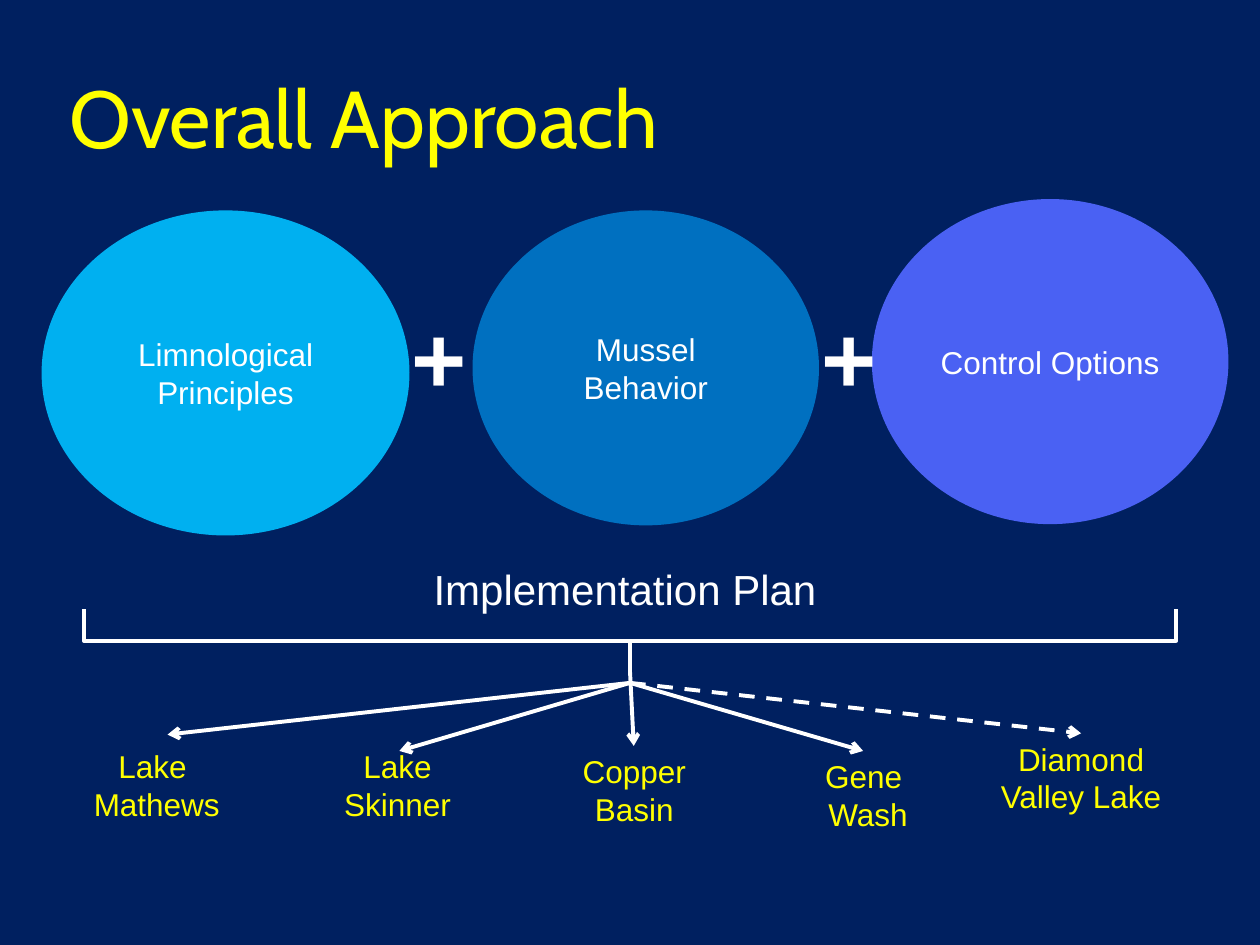
import pptx
import pptx.dml.color
import pptx.enum.dml
import pptx.enum.shapes
import pptx.enum.text
import pptx.oxml
import pptx.oxml.ns
import pptx.util
from dataclasses import dataclass

Inches = pptx.util.Inches
Pt = pptx.util.Pt
RGBColor = pptx.dml.color.RGBColor
Align = pptx.enum.text.PP_ALIGN
Anchor = pptx.enum.text.MSO_ANCHOR
Shape = pptx.enum.shapes.MSO_SHAPE

NAVY = RGBColor(0x00, 0x20, 0x60)
YELLOW = RGBColor(0xFF, 0xFF, 0x00)
WHITE = RGBColor(0xFF, 0xFF, 0xFF)
BLUE = RGBColor(0x00, 0x70, 0xC0)
VIOLET = RGBColor(0x4A, 0x61, 0xF3)
SKY = RGBColor(0x00, 0xB0, 0xF0)
STROKE = Pt(2.25)


@dataclass
class Box:
    left: float
    top: float
    width: float
    height: float

    def place(self) -> tuple:
        return tuple(Inches(n) for n in (self.left, self.top, self.width, self.height))


@dataclass
class Disc:
    text: str
    box: Box
    fill: RGBColor


@dataclass
class Lake:
    text: str
    box: Box
    start: tuple
    tip: tuple
    dashed: bool = False


def write(frame, text: str, *, size: float = 18, color: RGBColor = WHITE,
          font: str = "Arial", bold: bool = False, align=Align.CENTER,
          anchor=Anchor.TOP) -> None:
    """Fill a text frame, one paragraph for each line of text."""
    frame.word_wrap = True
    frame.auto_size = pptx.enum.text.MSO_AUTO_SIZE.NONE
    frame.vertical_anchor = anchor
    frame.text = text
    for para in frame.paragraphs:
        para.alignment = align
        para.font.size = Pt(size)
        para.font.name = font
        para.font.bold = bold
        para.font.color.rgb = color


def label(slide, box: Box, text: str, **style) -> None:
    write(slide.shapes.add_textbox(*box.place()).text_frame, text, **style)


def draw_disc(slide, disc: Disc) -> None:
    oval = slide.shapes.add_shape(Shape.OVAL, *disc.box.place())
    oval.shadow.inherit = False
    oval.fill.solid()
    oval.fill.fore_color.rgb = disc.fill
    oval.line.fill.background()
    write(oval.text_frame, disc.text, anchor=Anchor.MIDDLE)


def draw_brace(slide, box: Box) -> None:
    brace = slide.shapes.add_shape(Shape.RIGHT_BRACE, *box.place())
    brace.rotation = 90
    brace.adjustments[0] = 0
    brace.adjustments[1] = 0.5
    brace.shadow.inherit = False
    brace.fill.background()
    brace.line.color.rgb = WHITE
    brace.line.width = STROKE


def draw_arrow(slide, start: tuple, tip: tuple, dashed: bool) -> None:
    ends = [Inches(n) for n in (*start, *tip)]
    arrow = slide.shapes.add_connector(pptx.enum.shapes.MSO_CONNECTOR.STRAIGHT, *ends)
    arrow.line.color.rgb = WHITE
    arrow.line.width = STROKE
    if dashed:
        arrow.line.dash_style = pptx.enum.dml.MSO_LINE.DASH
    # Arrowhead and no shadow
    props = arrow.element.spPr
    head = pptx.oxml.parse_xml(
        f'<a:tailEnd {pptx.oxml.ns.nsdecls("a")} type="arrow"/>')
    props.find(pptx.oxml.ns.qn("a:ln")).append(head)
    props.append(pptx.oxml.parse_xml(f'<a:effectLst {pptx.oxml.ns.nsdecls("a")}/>'))


DISCS = [
    Disc("Mussel Behavior", Box(3.75, 1.67, 2.75, 2.5), BLUE),
    Disc("Control Options", Box(6.92, 1.58, 2.83, 2.58), VIOLET),
    Disc("Limnological Principles", Box(0.33, 1.67, 2.92, 2.58), SKY),
]
HUB = (5, 5.42)
LAKES = [
    Lake("Lake \nMathews", Box(0.33, 5.88, 1.83, 0.71), HUB, (1.33, 5.83)),
    Lake("Lake Skinner", Box(2.5, 5.88, 1.31, 0.71), HUB, (3.17, 5.96)),
    Lake("Copper Basin", Box(4.42, 5.92, 1.23, 0.71), (5, 5.33), (5.03, 5.92)),
    Lake("Gene\n Wash", Box(6.12, 5.96, 1.47, 0.71), HUB, (6.85, 5.96)),
    Lake("Diamond Valley Lake", Box(7.83, 5.82, 1.5, 1.31), HUB, (8.58, 5.82), True),
]


def main() -> None:
    deck = pptx.Presentation()
    deck.slide_width, deck.slide_height = Inches(10), Inches(7.5)
    slide = deck.slides.add_slide(deck.slide_layouts[5])
    slide.background.fill.solid()
    slide.background.fill.fore_color.rgb = NAVY

    # Title
    title = slide.shapes.title
    title.left, title.top, title.width, title.height = Box(0.5, 0.3, 8.17, 1.25).place()
    frame = title.text_frame
    frame.margin_left = frame.margin_right = Inches(0.05)
    write(frame, "Overall Approach", size=46, color=YELLOW, font="Cabin",
          align=Align.LEFT, anchor=Anchor.MIDDLE)

    # Three inputs joined by plus signs
    for disc in DISCS:
        draw_disc(slide, disc)
    for left in (3.17, 6.42):
        label(slide, Box(left, 2.32, 0.58, 1.01), "+", size=54, bold=True)

    # Plan and its brace
    draw_brace(slide, Box(4.75, 0.75, 0.5, 8.67))
    label(slide, Box(2, 4.42, 5.92, 0.51), "Implementation Plan", size=24)

    # Lakes the plan leads to
    for lake in LAKES:
        label(slide, lake.box, lake.text, color=YELLOW)
        draw_arrow(slide, lake.start, lake.tip, lake.dashed)

    deck.save("out.pptx")


if __name__ == "__main__":
    main()
